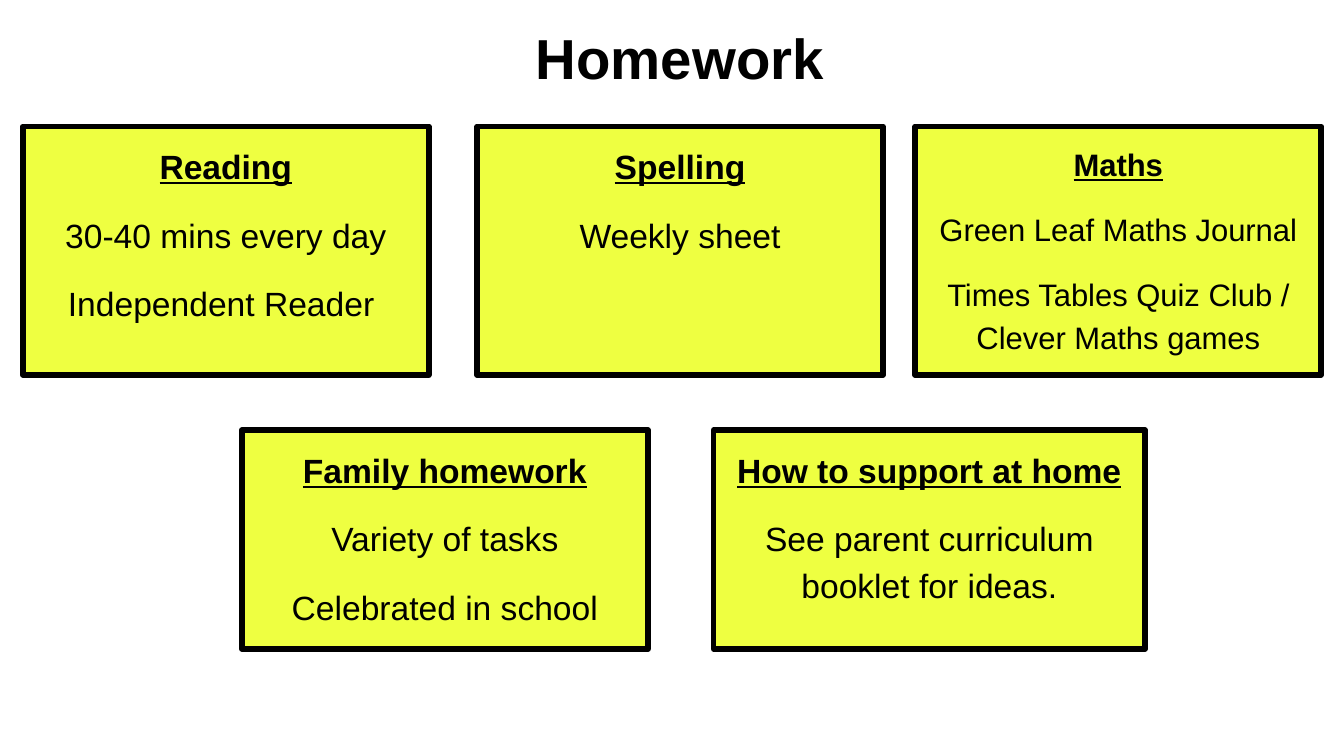
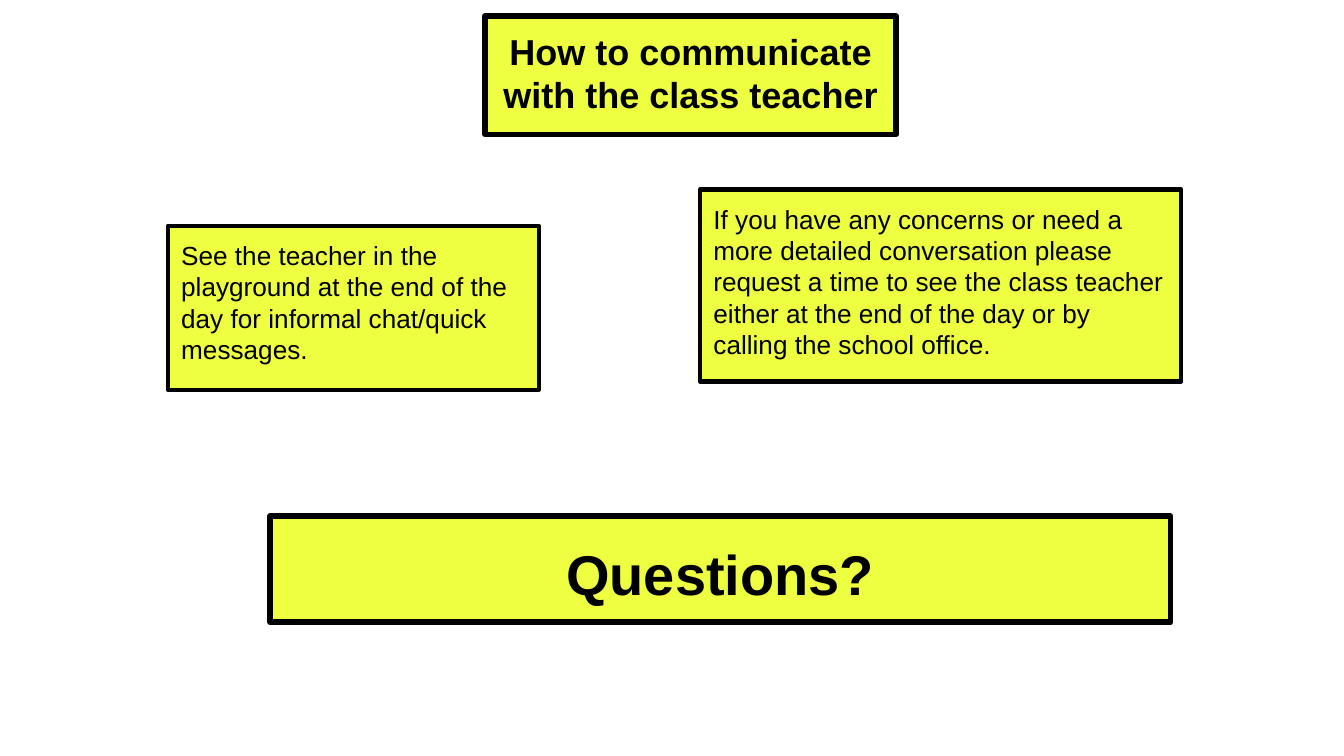
from lxml import etree
from pptx import Presentation
from pptx.dml.color import RGBColor
from pptx.enum.shapes import MSO_SHAPE
from pptx.enum.text import MSO_ANCHOR, PP_ALIGN
from pptx.oxml.ns import qn
from pptx.util import Inches, Pt

RECTANGLE = MSO_SHAPE.RECTANGLE
TOP = MSO_ANCHOR.TOP
LEFT, CENTER = PP_ALIGN.LEFT, PP_ALIGN.CENTER

COLORS = {"card": "EEFF41", "ink": "000000"}
FONT = "Arial"
CARD_WIDTH = 3.02
TOP_ROW = (0.94, 1.85)  # top, height
BOTTOM_ROW = (3.2, 1.63)


def write(shape, lines, size, align=CENTER, spacing=1.0, gap=0, bold_first=True, underline_first=False):
    """Fill a shape with paragraphs; only the first one may be bold or underlined."""
    frame = shape.text_frame
    frame.word_wrap = True
    frame.vertical_anchor = TOP
    frame.margin_left = frame.margin_right = Inches(0.1)
    frame.margin_top = frame.margin_bottom = Inches(0.1)
    for index, line in enumerate(lines):
        paragraph = frame.paragraphs[0] if index == 0 else frame.add_paragraph()
        paragraph.text = line
        paragraph.alignment = align
        paragraph.line_spacing = spacing
        paragraph.space_before = Pt(gap if index else 0)
        paragraph.space_after = Pt(gap if index == len(lines) - 1 else 0)
        paragraph.font.name = FONT
        paragraph.font.size = Pt(size)
        paragraph.font.color.rgb = RGBColor.from_string(COLORS["ink"])
        paragraph.font.bold = bold_first and index == 0
        paragraph.font.underline = underline_first and index == 0


def add_card(slide, left, top, width, height, border=3):
    """Add a yellow box with a black, round-cornered border."""
    card = slide.shapes.add_shape(RECTANGLE, Inches(left), Inches(top), Inches(width), Inches(height))
    card.shadow.inherit = False
    card.fill.solid()
    card.fill.fore_color.rgb = RGBColor.from_string(COLORS["card"])
    card.line.color.rgb = RGBColor.from_string(COLORS["ink"])
    card.line.width = Pt(border)
    etree.SubElement(card.element.spPr.find(qn("a:ln")), qn("a:round"))
    return card


presentation = Presentation()
presentation.slide_width = Inches(10)
presentation.slide_height = Inches(10 * 9 / 16)
blank = presentation.slide_layouts[6]

# Homework
slide = presentation.slides.add_slide(blank)
title = slide.shapes.add_textbox(Inches(3.79), Inches(0.07), Inches(2.54), Inches(0.66))
write(title, ["Homework"], 30.2)

homework_cards = [
    (0.17, TOP_ROW, CARD_WIDTH, 18, ["Reading", "30-40 mins every day", "Independent Reader "]),
    (3.55, TOP_ROW, CARD_WIDTH, 18, ["Spelling", "Weekly sheet"]),
    (6.81, TOP_ROW, CARD_WIDTH, 16.6,
     ["Maths", "Green Leaf Maths Journal", "Times Tables Quiz Club / Clever Maths games"]),
    (1.8, BOTTOM_ROW, CARD_WIDTH, 18, ["Family homework", "Variety of tasks", "Celebrated in school"]),
    (5.31, BOTTOM_ROW, 3.21, 18, ["How to support at home", "See parent curriculum booklet for ideas."]),
]
for left, (top, height), width, size, lines in homework_cards:
    card = add_card(slide, left, top, width, height)
    write(card, lines, size, spacing=1.15, gap=12, underline_first=True)

# Communication and questions
slide = presentation.slides.add_slide(blank)
heading = add_card(slide, 3.61, 0.12, 3.06, 0.88)
write(heading, ["How to communicate with the class teacher"], 19.3)

contact_cards = [
    (1.25, 1.68, 2.76, 1.22,
     "See the teacher in the playground at the end of the day for informal chat/quick messages."),
    (5.21, 1.41, 3.58, 1.43,
     "If you have any concerns or need a more detailed conversation please request a time to see "
     "the class teacher either at the end of the day or by calling the school office."),
]
for left, top, width, height, text in contact_cards:
    card = add_card(slide, left, top, width, height, border=2.25)
    write(card, [text], 14, align=LEFT, bold_first=False)

questions = add_card(slide, 2.01, 3.84, 6.7, 0.79)
write(questions, ["Questions?"], 30, spacing=1.15, gap=12)

presentation.save("out.pptx")
